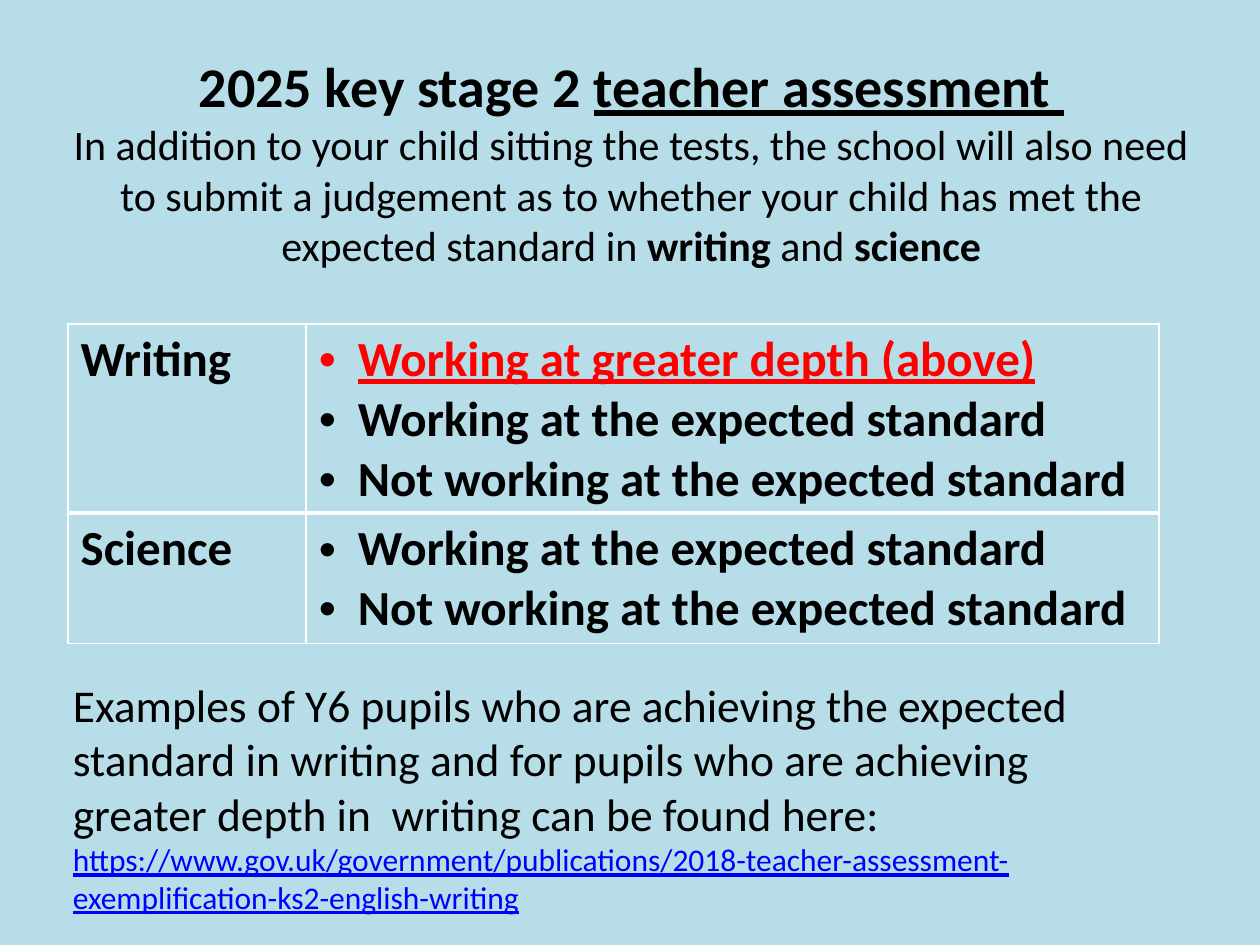
import pptx
import pptx.dml.color
import pptx.enum.text
import pptx.oxml
import pptx.oxml.ns
import pptx.util
from dataclasses import dataclass

Inches = pptx.util.Inches
Pt = pptx.util.Pt
ALIGN = pptx.enum.text.PP_ALIGN


@dataclass
class Theme:
    font: str = "Calibri"
    back: str = "B7DEE8"
    ink: str = "000000"
    alert: str = "FF0000"
    link: str = "0000FF"
    rule: str = "FFFFFF"
    title: int = 32
    intro: int = 24
    cell: int = 28
    body: int = 26
    small: int = 18


def color(code):
    return pptx.dml.color.RGBColor.from_string(code)


def node(xml):
    space = pptx.oxml.ns.nsdecls("a")
    return pptx.oxml.parse_xml(xml.replace(" ", f" {space} ", 1))


class Page:
    def __init__(self, deck, theme):
        self.theme = theme
        self.slide = deck.slides.add_slide(deck.slide_layouts[6])
        fill = self.slide.background.fill
        fill.solid()
        fill.fore_color.rgb = color(theme.back)

    def fill_text(self, frame, lines):
        for i, line in enumerate(lines):
            para = frame.paragraphs[0] if i == 0 else frame.add_paragraph()
            self.para(para, **line)

    def para(self, para, runs, size, ink=None, bold=None, line=None,
             align=ALIGN.LEFT, bullet=False):
        para.alignment = align
        font = para.font
        font.name = self.theme.font
        font.size = Pt(size)
        font.bold = bold
        font.underline = line
        font.color.rgb = color(ink or self.theme.ink)
        for text, style in runs:
            run = para.add_run()
            run.text = text
            for key, value in style.items():
                setattr(run.font, key, value)
        if bullet:
            props = para._p.get_or_add_pPr()
            props.set("marL", str(Inches(0.31)))
            props.set("indent", str(-Inches(0.31)))
            props.insert(0, node('<a:buFont typeface="Arial"/>'))
            props.insert(1, node('<a:buChar char="•"/>'))

    def text(self, box, lines):
        shape = self.slide.shapes.add_textbox(*map(Inches, box))
        frame = shape.text_frame
        frame.word_wrap = True
        self.fill_text(frame, lines)

    def edge(self, cell, base):
        props = cell._tc.get_or_add_tcPr()
        for side in "LRTB":
            width = Pt(base if side == "B" else 1)
            props.append(node(
                f'<a:ln{side} w="{width}"><a:solidFill>'
                f'<a:srgbClr val="{self.theme.rule}"/>'
                f'</a:solidFill></a:ln{side}>'))

    def table(self, box, cols, rows, data):
        shape = self.slide.shapes.add_table(
            len(rows), len(cols), *map(Inches, box))
        grid = shape.table
        grid.first_row = grid.horz_banding = False
        for col, width in zip(grid.columns, cols):
            col.width = Inches(width)
        for i, (height, cells) in enumerate(zip(rows, data)):
            grid.rows[i].height = Inches(height)
            for j, lines in enumerate(cells):
                cell = grid.cell(i, j)
                self.edge(cell, 3 if i < len(rows) - 1 else 1)
                cell.fill.background()
                self.fill_text(cell.text_frame, lines)


def main():
    deck = pptx.Presentation()
    deck.slide_width = Inches(10)
    deck.slide_height = Inches(7.5)
    theme = Theme()
    page = Page(deck, theme)

    strong = {"bold": True}
    page.text((0.48, 0.36, 9.06, 1.85), [
        dict(runs=[("2025 key stage 2 ", {}),
                   ("teacher assessment ", {"underline": True})],
             size=theme.title, bold=True, align=ALIGN.CENTER),
        dict(runs=[("In addition to your child sitting the tests, the school "
                    "will also need to submit a judgement as to whether your "
                    "child has met the expected standard in ", {}),
                   ("writing ", strong), ("and ", {}), ("science", strong)],
             size=theme.intro, align=ALIGN.CENTER),
    ])

    def entry(text, **style):
        return dict(runs=[(text, {})], size=theme.cell, bold=True, **style)

    above = entry("Working at greater depth (above)", bullet=True,
                  ink=theme.alert, line=True)
    levels = [entry("Working at the expected standard", bullet=True),
              entry("Not working at the expected standard", bullet=True)]
    page.table((0.54, 2.57, 8.66, 2.53), (1.89, 6.77), (1.5, 1.03), [
        [[entry("Writing")], [above] + levels],
        [[entry("Science")], levels],
    ])

    page.text((0.48, 5.32, 8.77, 2.02), [
        dict(runs=[("Examples of Y6 pupils who are achieving the expected "
                    "standard in writing and for pupils who are achieving "
                    "greater depth in  writing can be found here:", {})],
             size=theme.body),
        dict(runs=[("https://www.gov.uk/government/publications/"
                    "2018-teacher-assessment-exemplification-ks2-"
                    "english-writing", {})],
             size=theme.small, ink=theme.link, line=True),
    ])
    deck.save("out.pptx")


if __name__ == "__main__":
    main()
